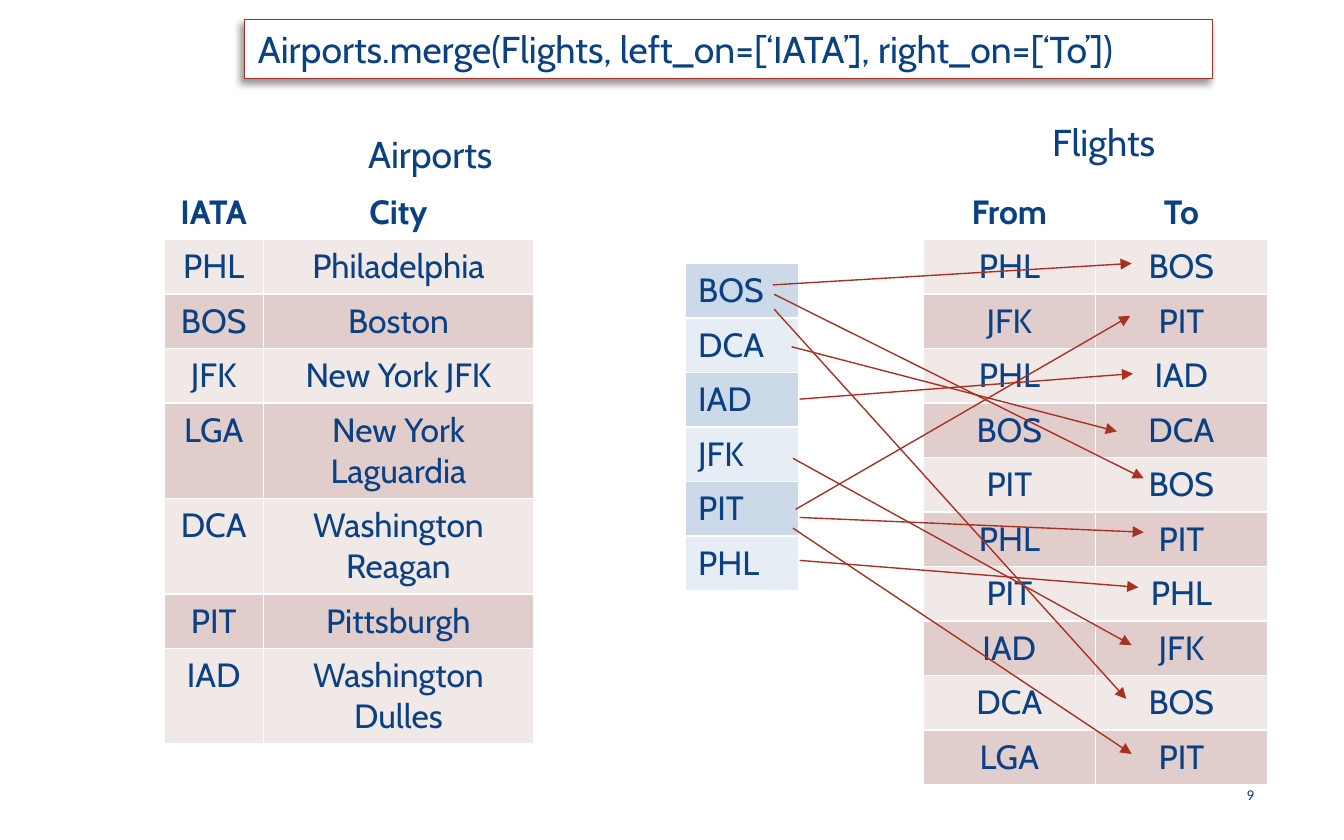
from lxml import etree
from pptx import Presentation
from pptx import util as u
from pptx.dml.color import RGBColor
from pptx.enum import shapes, text
from pptx.oxml import parse_xml
from pptx.oxml.ns import nsdecls, qn

PX = 4572  # 200 px to the inch
NAVY, RED, WHITE = "0B4183", "A93023", "FFFFFF"
PINKS = ["F1E8E8", "E2CDCD"]
BLUES = ["CCD9E9", "E7EDF5"]
ROW_H = 81


def color(value):
    return RGBColor.from_string(value)


def write(tf, words, size, align=text.PP_ALIGN.LEFT, bold=False, font="Cabin"):
    p = tf.paragraphs[0]
    p.alignment = align
    r = p.add_run()
    r.text = words
    r.font.size = u.Pt(size)
    r.font.name = font
    r.font.bold = bold
    r.font.color.rgb = color(NAVY)


prs = Presentation()
prs.slide_width, prs.slide_height = 2000 * PX, 1250 * PX
s = prs.slides.add_slide(prs.slide_layouts[6])

# Tables: left, top, column widths, has header, band fills, alignment, rows
CENTER, LEFT = text.PP_ALIGN.CENTER, text.PP_ALIGN.LEFT
airports = [
    ("IATA", "City"), ("PHL", "Philadelphia"), ("BOS", "Boston"),
    ("JFK", "New York JFK"), ("LGA", "New York Laguardia"),
    ("DCA", "Washington Reagan"), ("PIT", "Pittsburgh"),
    ("IAD", "Washington Dulles"),
]
flights = [
    ("From", "To"), ("PHL", "BOS"), ("JFK", "PIT"), ("PHL", "IAD"),
    ("BOS", "DCA"), ("PIT", "BOS"), ("PHL", "PIT"), ("PIT", "PHL"),
    ("IAD", "JFK"), ("DCA", "BOS"), ("LGA", "PIT"),
]
keys = [(code,) for code in ("BOS", "DCA", "IAD", "JFK", "PIT", "PHL")]
tables = [
    (244, 275, (148, 402), True, PINKS, CENTER, airports),
    (1374, 275, (256, 256), True, PINKS, CENTER, flights),
    (1019, 392, (169,), False, BLUES, LEFT, keys),
]
for left, top, widths, header, bands, align, rows in tables:
    tbl = s.shapes.add_table(len(rows), len(widths), left * PX, top * PX,
                             sum(widths) * PX, len(rows) * ROW_H * PX).table
    tbl.first_row = tbl.horz_banding = False
    for column, width in zip(tbl.columns, widths):
        column.width = width * PX
    for i, row in enumerate(rows):
        tbl.rows[i].height = ROW_H * PX
        is_head = header and i == 0
        fill = WHITE if is_head else bands[(i - header) % 2]
        for j, words in enumerate(row):
            cell = tbl.cell(i, j)
            cell.fill.solid()
            cell.fill.fore_color.rgb = color(fill)
            write(cell.text_frame, words, 18, align, bold=is_head)

# Table headings
for words, left, top, width in [("Airports", 528, 186, 232),
                                ("Flights", 1546, 168, 202)]:
    tf = s.shapes.add_textbox(left * PX, top * PX, width * PX, 88 * PX).text_frame
    tf.word_wrap = True
    write(tf, words, 20)

# Merge call in a shadowed box
sp = s.shapes.add_shape(shapes.MSO_SHAPE.RECTANGLE,
                        364 * PX, 29 * PX, 1440 * PX, 88 * PX)
sp.fill.solid()
sp.fill.fore_color.rgb = color(WHITE)
sp.line.color.rgb = color(RED)
sp.line.width = u.Pt(0.75)
sp.shadow.inherit = False
sp._element.spPr.find(qn("a:effectLst")).append(parse_xml(
    f'<a:outerShdw {nsdecls("a")} blurRad="50800" dist="38100" dir="8100000">'
    '<a:srgbClr val="000000"><a:alpha val="40000"/></a:srgbClr></a:outerShdw>'))
sp.text_frame.word_wrap = True
write(sp.text_frame, "Airports.merge(Flights, left_on=[‘IATA’], right_on=[‘To’])", 20)

# Arrows from each key to its matching flights
arrows = [
    (1152, 438, 1702, 712), (1190, 834, 1694, 874), (1190, 770, 1702, 792),
    (1180, 786, 1684, 1122), (1150, 424, 1684, 392), (1152, 460, 1676, 1040),
    (1180, 682, 1684, 960), (1190, 594, 1686, 556), (1184, 758, 1682, 470),
    (1178, 516, 1662, 642),
]
for ends in arrows:
    line = s.shapes.add_connector(shapes.MSO_CONNECTOR.STRAIGHT,
                                  *(v * PX for v in ends))
    line.line.color.rgb = color(RED)
    line.line.width = u.Pt(0.75)
    etree.SubElement(line.line._get_or_add_ln(), qn("a:tailEnd"), type="triangle")
    etree.SubElement(line._element.spPr, qn("a:effectLst"))

# Page number
tf = s.shapes.add_textbox(1796 * PX, 1150 * PX, 90 * PX, 66 * PX).text_frame
tf.word_wrap = True
tf.vertical_anchor = text.MSO_ANCHOR.MIDDLE
write(tf, "9", 8, text.PP_ALIGN.RIGHT, font="Calibri")

prs.save("out.pptx")
